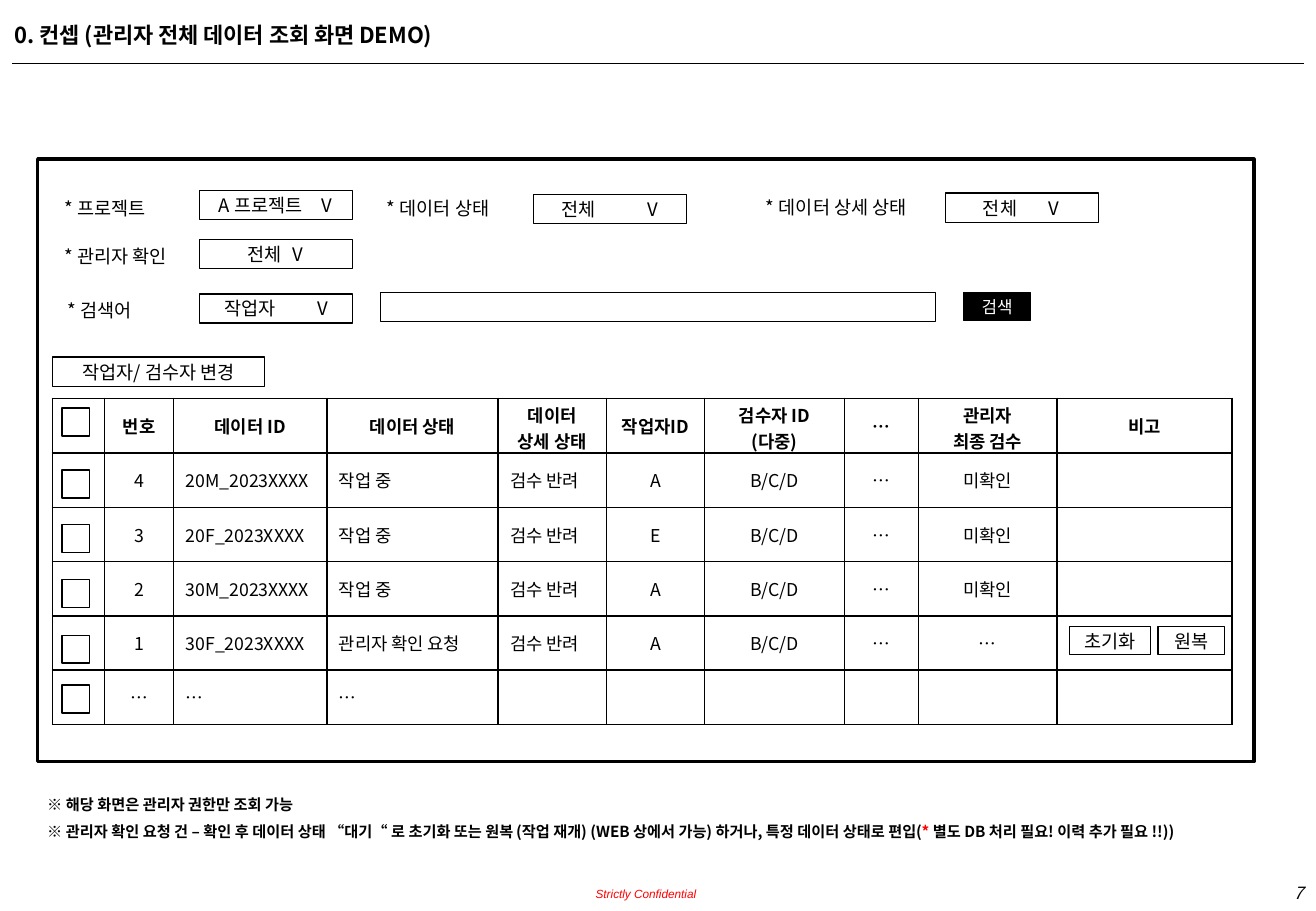
"""Builds the admin data lookup demo slide."""
from dataclasses import dataclass

from lxml import etree
from pptx import Presentation
from pptx import util as u
from pptx.dml.color import RGBColor
from pptx.enum import shapes, text
from pptx.oxml.ns import qn


@dataclass(frozen=True)
class Theme:
    """Colours, fonts and type sizes."""
    ink: RGBColor = RGBColor(0, 0, 0)
    paper: RGBColor = RGBColor(255, 255, 255)
    alert: RGBColor = RGBColor(255, 0, 0)
    font: str = "Noto Sans CJK KR"
    footer_font: str = "Arial"
    title: float = 13
    control: float = 11
    cell: float = 10.5
    button: float = 10
    note: float = 9
    footer: float = 7
    thin: float = 0.75


T = Theme()
LEFT, CENTER, RIGHT = text.PP_ALIGN.LEFT, text.PP_ALIGN.CENTER, text.PP_ALIGN.RIGHT
TOP, MIDDLE, BOTTOM = (text.MSO_ANCHOR.TOP, text.MSO_ANCHOR.MIDDLE,
                       text.MSO_ANCHOR.BOTTOM)
COLUMNS = [43, 57, 126, 141, 89, 81, 115, 61, 114, 144]
LEFT_COLUMNS = (2, 3, 4)
ROWS = [
    ["", "번호", "데이터 ID", "데이터 상태", "데이터\n상세 상태", "작업자ID",
     "검수자 ID\n(다중)", "…", "관리자\n최종 검수", "비고"],
    ["", "4", "20M_2023XXXX", "작업 중", "검수 반려", "A", "B/C/D", "…", "미확인", ""],
    ["", "3", "20F_2023XXXX", "작업 중", "검수 반려", "E", "B/C/D", "…", "미확인", ""],
    ["", "2", "30M_2023XXXX", "작업 중", "검수 반려", "A", "B/C/D", "…", "미확인", ""],
    ["", "1", "30F_2023XXXX", "관리자 확인 요청", "검수 반려", "A", "B/C/D", "…", "…", ""],
    ["", "…", "…", "…", "", "", "", "", "", ""],
]
CHECKBOX_TOPS = [8, 59, 104, 149, 195, 236]
NOTES = [
    [("※ 해당 화면은 관리자 권한만 조회 가능", T.ink)],
    [("※ 관리자 확인 요청 건 – 확인 후 데이터 상태 “대기“ 로 초기화 또는 원복 (작업 재개) "
      "(WEB 상에서 가능) 하거나, 특정 데이터 상태로 편입(", T.ink),
     ("*", T.alert), (" 별도 DB 처리 필요! 이력 추가 필요 !!))", T.ink)],
]


def px(n):
    """Turn px, a hundredth of an inch each, into EMU."""
    return u.Emu(n * 9144)


def assign(obj, values):
    """Set attributes from a dict."""
    for name, value in values.items():
        setattr(obj, name, value)


def add_run(p, words, size, color=T.ink, font=T.font, **extra):
    """Add a formatted run to a paragraph."""
    r = p.add_run()
    r.text = words
    r.font.color.rgb = color
    assign(r.font, {"size": u.Pt(size), "name": font, **extra})
    etree.SubElement(r.font._element, qn("a:ea"), typeface=font)


def write(tf, paragraphs, size, align=LEFT, anchor=TOP, inset=(10, 5, 10, 5),
          spacing=None, **extra):
    """Fill a text frame with paragraphs of (words, colour) runs."""
    left, top, right, bottom = map(px, inset)
    assign(tf, {"word_wrap": True, "auto_size": text.MSO_AUTO_SIZE.NONE,
                "vertical_anchor": anchor, "margin_left": left, "margin_top": top,
                "margin_right": right, "margin_bottom": bottom})
    for i, runs in enumerate(paragraphs):
        p = tf.add_paragraph() if i else tf.paragraphs[0]
        assign(p, {"alignment": align, "line_spacing": spacing})
        for words, color in runs:
            add_run(p, words, size, color, **extra)


def label(s, words, box, size=T.control, color=T.ink, **style):
    """Add a one-line text box."""
    sp = s.shapes.add_textbox(*map(px, box))
    write(sp.text_frame, [[(words, color)]], size, **style)


def frame(s, box, words="", width=T.thin, fill=None, color=T.ink, size=T.control,
          align=CENTER, inset=(0, 0, 0, 0)):
    """Add an outlined rectangle with optional text."""
    sp = s.shapes.add_shape(shapes.MSO_SHAPE.RECTANGLE, *map(px, box))
    sp.shadow.inherit = False
    sp.line.color.rgb = T.ink
    sp.line.width = u.Pt(width)
    if fill is None:
        sp.fill.background()
    else:
        sp.fill.solid()
        sp.fill.fore_color.rgb = fill
    if words:
        write(sp.text_frame, [[(words, color)]], size, align, MIDDLE, inset)
    return sp


def dropdown(s, x, y, choice, start, arrow):
    """Add a select box with its arrow letter on a tab stop."""
    sp = frame(s, (x, y, 126, 24), f"{choice}\tV", align=LEFT, inset=(start, 0, 0, 0))
    pPr = sp.text_frame.paragraphs[0]._p.get_or_add_pPr()
    tabs = etree.SubElement(pPr, qn("a:tabLst"))
    etree.SubElement(tabs, qn("a:tab"), pos=str(px(arrow - start)), algn="l")


def header(s, box):
    """Place the title and the rule under it."""
    x, y, w, h = box
    title = s.shapes.title
    assign(title, dict(zip(("left", "top", "width", "height"), map(px, box))))
    write(title.text_frame, [[("0. 컨셉 (관리자 전체 데이터 조회 화면 DEMO)", T.ink)]],
          T.title, anchor=MIDDLE, bold=True)
    rule = s.shapes.add_connector(shapes.MSO_CONNECTOR.STRAIGHT, px(x + 8),
                                  px(y + 39), px(x + 1071), px(y + 39))
    rule.line.color.rgb = T.ink
    rule.line.width = u.Pt(T.thin)
    etree.SubElement(rule._element.spPr, qn("a:effectLst"))


def filters(s, box):
    """Place the search conditions and the change button."""
    x, y, w, h = box
    for words, dx, dy, width, align in [
            ("* 프로젝트", 0, 1, 94, LEFT), ("* 데이터 상태", 239, 1, 157, CENTER),
            ("* 데이터 상세 상태", 567, 0, 157, CENTER),
            ("* 관리자 확인", 0, 41, 136, LEFT), ("* 검색어", 3, 85, 94, LEFT)]:
        label(s, words, (x + dx, y + dy, width, 29), align=align)
    for dx, dy, choice, start, arrow in [
            (121, 1, "A 프로젝트", 16, 101), (396, 4, "전체", 23, 94),
            (735, 3, "전체", 31, 85), (121, 41, "전체", 40, 77),
            (121, 86, "작업자", 21, 97)]:
        dropdown(s, x + dx, y + dy, choice, start, arrow)
    frame(s, (x + 270, y + 85, 457, 24))
    frame(s, (x + 750, y + 85, 55, 23), "검색", 0.25, T.ink, T.paper, T.button)
    frame(s, (x, y + 138, 175, 24), "작업자/ 검수자 변경")


def border(cell):
    """Draw thin lines on all four sides of a cell."""
    tcPr = cell._tc.get_or_add_tcPr()
    for i, side in enumerate(("lnL", "lnR", "lnT", "lnB")):
        ln = etree.Element(qn(f"a:{side}"), w=str(u.Pt(1)))
        fill = etree.SubElement(ln, qn("a:solidFill"))
        etree.SubElement(fill, qn("a:srgbClr"), val=str(T.ink))
        tcPr.insert(i, ln)


def data_table(s, box):
    """Place the result table with its checkboxes and row buttons."""
    x, y, w, h = box
    tbl = s.shapes.add_table(len(ROWS), len(COLUMNS), *map(px, box)).table
    assign(tbl, {"first_row": False, "horz_banding": False})
    for column, width in zip(tbl.columns, COLUMNS):
        column.width = px(width)
    for i, row in enumerate(ROWS):
        tbl.rows[i].height = u.Emu(px(h) // len(ROWS))
        for j, words in enumerate(row):
            cell = tbl.cell(i, j)
            cell.fill.background()
            border(cell)
            lines = words.split("\n")
            is_left = i > 0 and j in LEFT_COLUMNS
            side = px(10 if is_left else 3)
            assign(cell, {"vertical_anchor": MIDDLE, "margin_left": side,
                          "margin_right": px(3), "margin_bottom": 0,
                          "margin_top": px(3 if len(lines) > 1 else 0)})
            for k, line in enumerate(lines):
                tf = cell.text_frame
                p = tf.add_paragraph() if k else tf.paragraphs[0]
                p.alignment = LEFT if is_left else CENTER
                if line:
                    add_run(p, line, T.cell, bold=i == 0)
    for top in CHECKBOX_TOPS:
        frame(s, (x + 8, y + top, 23, 23))
    for words, dx, width in [("초기화", 837, 67), ("원복", 910, 55)]:
        frame(s, (x + dx, y + 188, width, 23), words)


def panel(s, box):
    """Place the framed demo screen."""
    x, y, w, h = box
    frame(s, box, width=2)
    filters(s, (x + 12, y + 25, 971, 162))
    data_table(s, (x + 12, y + 197, sum(COLUMNS), 268))


def notes(s, box):
    """Place the remarks under the screen."""
    sp = s.shapes.add_textbox(*map(px, box))
    write(sp.text_frame, NOTES, T.note, spacing=1.5, bold=True)


def footer(s, box):
    """Place the confidentiality mark and the page number."""
    x, y, w, h = box
    label(s, "Strictly Confidential", (x, y, 153, 24), T.footer, T.alert, align=RIGHT,
          anchor=BOTTOM, inset=(0, 0, 0, 0), font=T.footer_font, italic=True)
    label(s, "7", (x + w - 167, y + 4, 167, 27), T.button, align=RIGHT, italic=True)


def main():
    """Build and save the deck."""
    prs = Presentation()
    assign(prs, {"slide_width": px(1083), "slide_height": px(750)})
    s = prs.slides.add_slide(prs.slide_layouts[5])
    header(s, (2, 13, 1052, 32))
    panel(s, (31, 131, 1001, 496))
    notes(s, (29, 642, 1045, 53))
    footer(s, (420, 718, 662, 31))
    prs.save("out.pptx")


if __name__ == "__main__":
    main()
